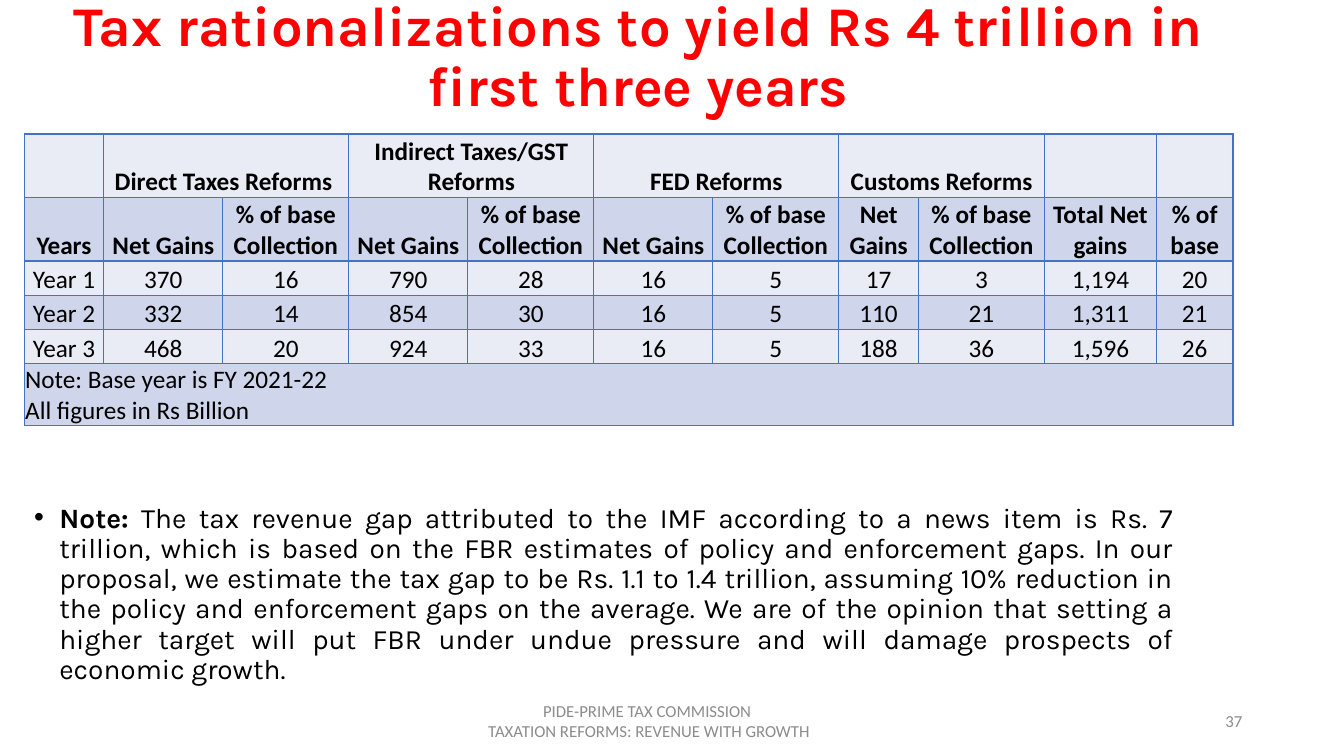
from lxml import etree
from pptx import Presentation
from pptx import util as u
from pptx.dml.color import RGBColor
from pptx.enum import text
from pptx.oxml import ns

COLOURS = {"title": "FF0000", "ink": "000000", "muted": "8C8C8C",
           "light": "E9EBF5", "dark": "CFD5EA", "border": "4472C4"}
LEFT, CENTER = text.PP_ALIGN.LEFT, text.PP_ALIGN.CENTER
RIGHT, JUSTIFY = text.PP_ALIGN.RIGHT, text.PP_ALIGN.JUSTIFY
TOP, MIDDLE, BOTTOM = text.MSO_ANCHOR.TOP, text.MSO_ANCHOR.MIDDLE, text.MSO_ANCHOR.BOTTOM


class SlideBuilder:
    def __init__(self, page):
        self.page = page

    def span(self, para, words, size, font="Calibri", colour="ink", bold=False):
        span = para.add_run()
        span.text = words
        span.font.size = u.Pt(size)
        span.font.name = font
        span.font.bold = bold
        span.font.color.rgb = RGBColor.from_string(COLOURS[colour])

    def text_box(self, place, paragraphs, align, anchor=MIDDLE, spacing=1.0, **style):
        """Each paragraph is a list of (words, bold) spans."""
        box = self.page.shapes.add_textbox(*map(u.Inches, place))
        frame = box.text_frame
        frame.word_wrap = True
        frame.vertical_anchor = anchor
        for index, spans in enumerate(paragraphs):
            para = frame.add_paragraph() if index else frame.paragraphs[0]
            para.alignment = align
            para.line_spacing = spacing
            for words, bold in spans:
                self.span(para, words, bold=bold, **style)
        return box

    def bullet(self, para, indent):
        props = para._p.get_or_add_pPr()
        props.set("marL", str(u.Inches(indent)))
        props.set("indent", str(-u.Inches(indent)))
        etree.SubElement(props, ns.qn("a:buFont")).set("typeface", "Arial")
        etree.SubElement(props, ns.qn("a:buChar")).set("char", "•")

    def borders(self, cell):
        props = cell._tc.get_or_add_tcPr()
        for position, side in enumerate(("a:lnL", "a:lnR", "a:lnT", "a:lnB")):
            line = etree.Element(ns.qn(side), w=str(u.Pt(1)))
            fill = etree.SubElement(line, ns.qn("a:solidFill"))
            etree.SubElement(fill, ns.qn("a:srgbClr")).set("val", COLOURS["border"])
            props.insert(position, line)

    def table(self, place, widths, heights, rows, merges, bold_rows):
        grid = self.page.shapes.add_table(len(rows), len(widths), *map(u.Inches, place)).table
        for column, width in zip(grid.columns, widths):
            column.width = u.Inches(width)
        for row, height in zip(grid.rows, heights):
            row.height = u.Inches(height)
        for row, first, last in merges:
            grid.cell(row, first).merge(grid.cell(row, last))
        for r, values in enumerate(rows):
            for c in range(len(widths)):
                cell = grid.cell(r, c)
                cell.fill.solid()
                shade = "dark" if r % 2 else "light"
                cell.fill.fore_color.rgb = RGBColor.from_string(COLOURS[shade])
                self.borders(cell)
                cell.vertical_anchor = BOTTOM
                cell.margin_left = cell.margin_right = cell.margin_top = u.Inches(0.01)
                cell.margin_bottom = 0
                words = values[c] if c < len(values) else ""
                if not words:
                    continue
                for index, line in enumerate(words.split("\n")):
                    frame = cell.text_frame
                    para = frame.add_paragraph() if index else frame.paragraphs[0]
                    para.alignment = LEFT if r == len(rows) - 1 else CENTER
                    self.span(para, line, 18, bold=r < bold_rows)


def main():
    deck = Presentation()
    deck.slide_width, deck.slide_height = u.Inches(13.33), u.Inches(7.5)
    builder = SlideBuilder(deck.slides.add_slide(deck.slide_layouts[6]))

    # Title
    builder.text_box((0.12, 0, 12.42, 1.16),
                     [[("Tax rationalizations to yield Rs 4 trillion in first three years", True)]],
                     CENTER, spacing=0.9, size=40, font="Karla", colour="title")

    # Slide number
    builder.text_box((9.42, 6.95, 3, 0.4), [[("37", False)]], RIGHT, size=12, colour="muted")

    # Table of gains
    gains, share = "Net Gains", "% of base Collection"
    rows = [
        ["", "Direct Taxes Reforms ", "", "Indirect Taxes/GST Reforms", "",
         "FED Reforms", "", "Customs Reforms"],
        ["Years"] + [gains, share] * 4 + ["Total Net gains", "% of base"],
        ["Year 1", "370", "16", "790", "28", "16", "5", "17", "3", "1,194", "20"],
        ["Year 2", "332", "14", "854", "30", "16", "5", "110", "21", "1,311", "21"],
        ["Year 3", "468", "20", "924", "33", "16", "5", "188", "36", "1,596", "26"],
        ["Note: Base year is FY 2021-22\nAll figures in Rs Billion"],
    ]
    widths = [0.79] + [1.18, 1.25] * 3 + [0.79, 1.25, 1.11, 0.76]
    heights = [0.63] * 2 + [0.34] * 3 + [0.6]
    merges = [(0, first, first + 1) for first in (1, 3, 5, 7)] + [(5, 0, 10)]
    builder.table((0.24, 1.33, 11.95, 2.88), widths, heights, rows, merges, bold_rows=2)

    # Note
    note = builder.text_box(
        (0.24, 4.95, 11.5, 1.64),
        [[("Note:", True),
          (" The tax revenue gap attributed to the IMF according to a news item is Rs. 7 trillion, "
           "which is based on the FBR estimates of policy and enforcement gaps. In our proposal, "
           "we estimate the tax gap to be Rs. 1.1 to 1.4 trillion, assuming 10% reduction in the "
           "policy and enforcement gaps on the average. We are of the opinion that setting a higher "
           "target will put FBR under undue pressure and will damage prospects of economic growth. ",
           False)]],
        JUSTIFY, TOP, 0.9, size=20, font="Karla")
    para = note.text_frame.paragraphs[0]
    para.space_before = u.Pt(10)
    builder.bullet(para, 0.25)

    # Footer
    builder.text_box((4.17, 6.95, 4.5, 0.4),
                     [[("PIDE-PRIME TAX COMMISSION", False)],
                      [(" TAXATION REFORMS: REVENUE WITH GROWTH", False)]],
                     CENTER, size=12, colour="muted")

    deck.save("out.pptx")


if __name__ == "__main__":
    main()
